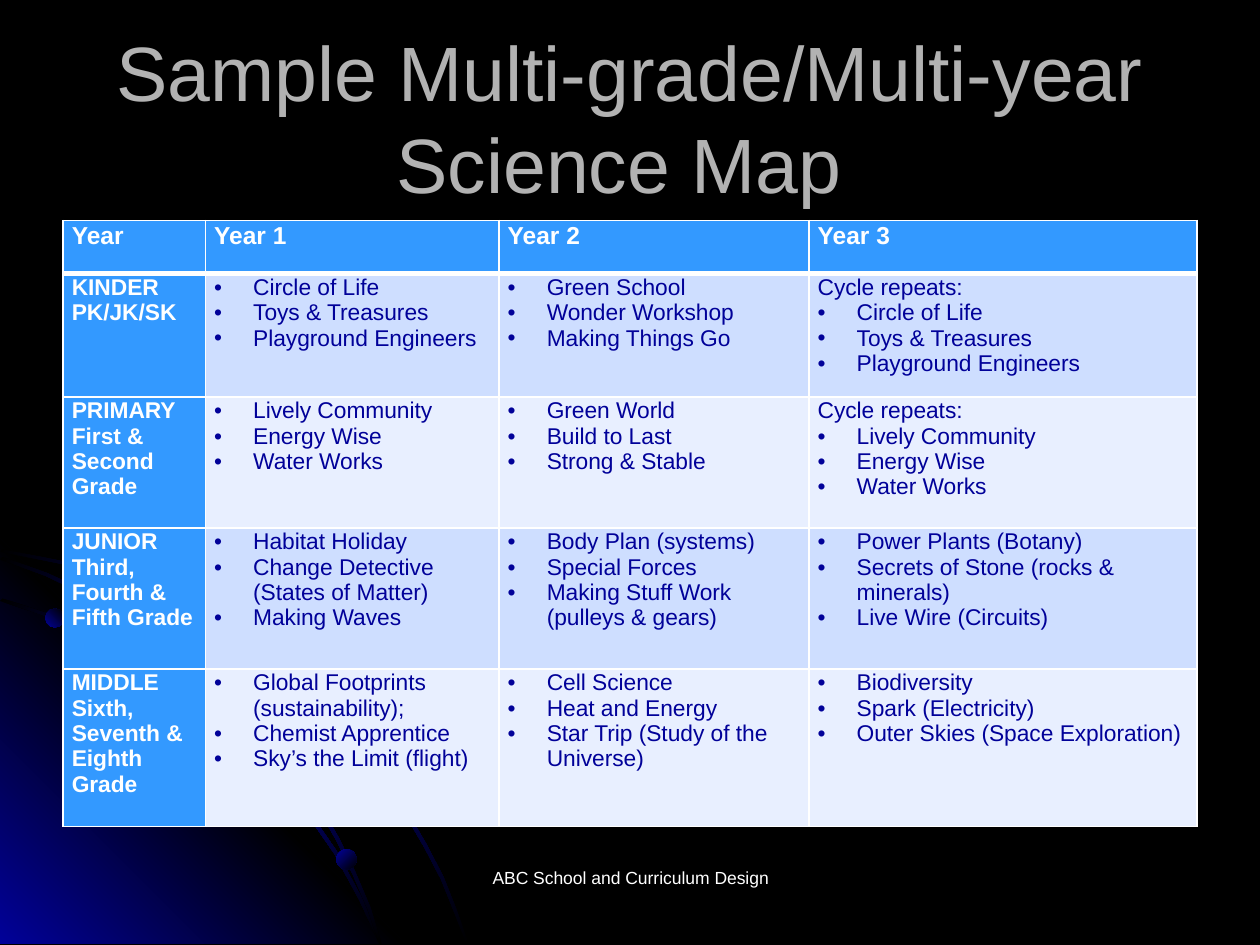
from lxml import etree
from pptx import Presentation
from pptx.dml.color import RGBColor
from pptx.enum.shapes import MSO_SHAPE
from pptx.enum.text import MSO_ANCHOR, MSO_AUTO_SIZE, PP_ALIGN
from pptx.oxml import parse_xml
from pptx.oxml.ns import nsdecls, qn
from pptx.util import Inches, Pt

OVAL = MSO_SHAPE.OVAL
CENTER = PP_ALIGN.CENTER
FONT = "Arial"
COLORS = {"black": "000000", "navy": "010199", "title": "B2B2B2", "white": "FFFFFF",
          "header": "3399FF", "band_dark": "CEDEFF", "band_light": "E8EFFF"}

# Content
TITLE = "Sample Multi-grade/Multi-year Science Map "
FOOTER = "ABC School and Curriculum Design"
HEADER = ["Year", "Year 1", "Year 2", "Year 3"]
KINDER_YEAR_1 = ["Circle of Life", "Toys & Treasures", "Playground Engineers"]
PRIMARY_YEAR_1 = ["Lively Community", "Energy Wise", "Water Works"]
REPEAT = "Cycle repeats:"
GRADES = [
    (["KINDER", "PK/JK/SK"],
     KINDER_YEAR_1,
     ["Green School", "Wonder Workshop", "Making Things Go"],
     [REPEAT] + KINDER_YEAR_1),
    (["PRIMARY", "First & Second Grade"],
     PRIMARY_YEAR_1,
     ["Green World", "Build to Last", "Strong & Stable"],
     [REPEAT] + PRIMARY_YEAR_1),
    (["JUNIOR", "Third, Fourth & Fifth Grade"],
     ["Habitat Holiday", "Change Detective (States of Matter)", "Making Waves"],
     ["Body Plan (systems)", "Special Forces", "Making Stuff Work (pulleys & gears)"],
     ["Power Plants (Botany)", "Secrets of Stone (rocks & minerals)", "Live Wire (Circuits)"]),
    (["MIDDLE", "Sixth, Seventh & Eighth Grade"],
     ["Global Footprints (sustainability);", "Chemist Apprentice", "Sky’s the Limit (flight)"],
     ["Cell Science", "Heat and Energy", "Star Trip (Study of the Universe)"],
     ["Biodiversity", "Spark (Electricity)", "Outer Skies (Space Exploration)"]),
]
COL_WIDTHS = [1.13, 2.33, 2.46, 3.08]
ROW_HEIGHTS = [0.42, 0.98, 1.04, 1.12, 1.25]

# Background decoration: lower edge of each arc, and (left, top, size, angle) of each dot
CORNER = [(0, 4.27), (3.22, 7.49), (0, 7.49)]
ARC_WIDTH = 0.02
ARCS = [
    [(0, 4.38), (0.56, 4.49), (0.97, 4.61), (1.35, 4.78), (1.73, 4.99), (2.08, 5.23),
     (2.41, 5.49), (2.71, 5.79), (2.98, 6.12), (3.23, 6.49), (3.37, 6.73), (3.5, 6.98),
     (3.6, 7.23), (3.7, 7.49)],
    [(0, 4.77), (0.39, 4.9), (0.77, 5.07), (1.15, 5.28), (1.5, 5.51), (1.83, 5.78),
     (2.13, 6.08), (2.4, 6.41), (2.65, 6.77), (2.85, 7.14), (3.01, 7.49)],
    [(0, 4.44), (0.36, 4.57), (0.74, 4.75), (1.09, 4.94), (1.42, 5.18), (1.73, 5.44),
     (2.02, 5.75), (2.27, 6.05), (2.52, 6.41), (2.67, 6.67), (2.8, 6.94), (2.92, 7.22),
     (3.01, 7.49)],
]
DOTS = [(0.36, 4.83, 0.15, 315), (2.67, 6.74, 0.16, 45), (1.37, 4.73, 0.21, 315)]


def rgb(name):
    return RGBColor.from_string(COLORS[name])


def style(p, size, color, bold=False):
    for r in p.runs:
        r.font.name, r.font.size, r.font.bold = FONT, Pt(size), bold
        r.font.color.rgb = rgb(color)


def paint_gradient(sp, names, angle):
    """Fill a shape with evenly spaced colour stops and no outline."""
    stops = "".join(
        f'<a:gs pos="{100000 * i // (len(names) - 1)}"><a:srgbClr val="{COLORS[n]}"/></a:gs>'
        for i, n in enumerate(names))
    sp.fill.gradient()
    spPr = sp._element.spPr
    spPr.replace(spPr.find(qn("a:gradFill")), parse_xml(
        f'<a:gradFill {nsdecls("a")} rotWithShape="1"><a:gsLst>{stops}</a:gsLst>'
        f'<a:lin ang="{angle * 60000}" scaled="1"/></a:gradFill>'))
    sp.line.fill.background()
    sp.shadow.inherit = False


def add_outline(shapes, points, names, angle):
    pts = [(Inches(x), Inches(y)) for x, y in points]
    builder = shapes.build_freeform(*pts[0])
    builder.add_line_segments(pts[1:], close=True)
    paint_gradient(builder.convert_to_shape(), names, angle)


def add_bullet(p):
    pPr = p._p.get_or_add_pPr()
    pPr.set("marL", str(Inches(0.31)))
    pPr.set("indent", str(-Inches(0.31)))
    etree.SubElement(pPr, qn("a:buFont"), typeface=FONT)
    etree.SubElement(pPr, qn("a:buChar"), char="•")


def set_borders(cell, top, bottom):
    tcPr = cell._tc.get_or_add_tcPr()
    widths = {"lnL": 1, "lnR": 1, "lnT": top, "lnB": bottom}
    for i, (tag, width) in enumerate(widths.items()):
        tcPr.insert(i, parse_xml(
            f'<a:{tag} {nsdecls("a")} w="{Pt(width)}"><a:solidFill>'
            f'<a:srgbClr val="{COLORS["white"]}"/></a:solidFill></a:{tag}>'))


def fill_cell(cell, lines, row, col):
    is_label = row == 0 or col == 0
    cell.margin_left = cell.margin_right = Inches(0.07)
    cell.margin_top, cell.margin_bottom = Inches(0.01), 0
    cell.fill.solid()
    band = "band_dark" if row % 2 else "band_light"
    cell.fill.fore_color.rgb = rgb("header" if is_label else band)
    set_borders(cell, 3 if row == 1 else 1, 3 if row == 0 else 1)
    tf = cell.text_frame
    tf.text = "\n".join(lines)
    for p in tf.paragraphs:
        if not is_label and p.text != REPEAT:
            add_bullet(p)
        style(p, 14 if row == 0 else 13, "white" if is_label else "navy", is_label)


prs = Presentation()
prs.slide_width, prs.slide_height = Inches(10), Inches(7.5)
s = prs.slides.add_slide(prs.slide_layouts[5])
s.background.fill.solid()
s.background.fill.fore_color.rgb = rgb("black")

# Corner glow, arcs and dots
add_outline(s.shapes, CORNER, ["navy", "black", "navy"], 315)
for arc in ARCS:
    upper = [(x + ARC_WIDTH, y - ARC_WIDTH) for x, y in reversed(arc[:-1])]
    end = (arc[-1][0] + ARC_WIDTH, arc[-1][1])
    add_outline(s.shapes, arc + [end] + upper, ["black", "navy", "black"], 45)
for left, top, size, angle in DOTS:
    dot = s.shapes.add_shape(OVAL, Inches(left), Inches(top), Inches(size), Inches(size))
    paint_gradient(dot, ["navy", "black"], angle)

# Title
title = s.shapes.title
title.left, title.top, title.width, title.height = map(Inches, (0.5, 0.3, 9, 1.25))
tf = title.text_frame
tf.text = TITLE
tf.auto_size, tf.vertical_anchor = MSO_AUTO_SIZE.NONE, MSO_ANCHOR.MIDDLE
p = tf.paragraphs[0]
p.alignment = CENTER
style(p, 44, "title")

# Science map table
rows = [[[name] for name in HEADER]] + GRADES
table = s.shapes.add_table(len(rows), len(HEADER), Inches(0.5), Inches(1.75),
                           Inches(sum(COL_WIDTHS)), Inches(sum(ROW_HEIGHTS))).table
for column, width in zip(table.columns, COL_WIDTHS):
    column.width = Inches(width)
for table_row, height in zip(table.rows, ROW_HEIGHTS):
    table_row.height = Inches(height)
for i, row in enumerate(rows):
    for j, lines in enumerate(row):
        fill_cell(table.cell(i, j), lines, i, j)

# Footer
footer = s.shapes.add_textbox(Inches(3.42), Inches(6.83), Inches(3.17), Inches(0.5))
tf = footer.text_frame
tf.word_wrap = True
tf.text = FOOTER
p = tf.paragraphs[0]
p.alignment = CENTER
style(p, 10, "white")

prs.save("out.pptx")
